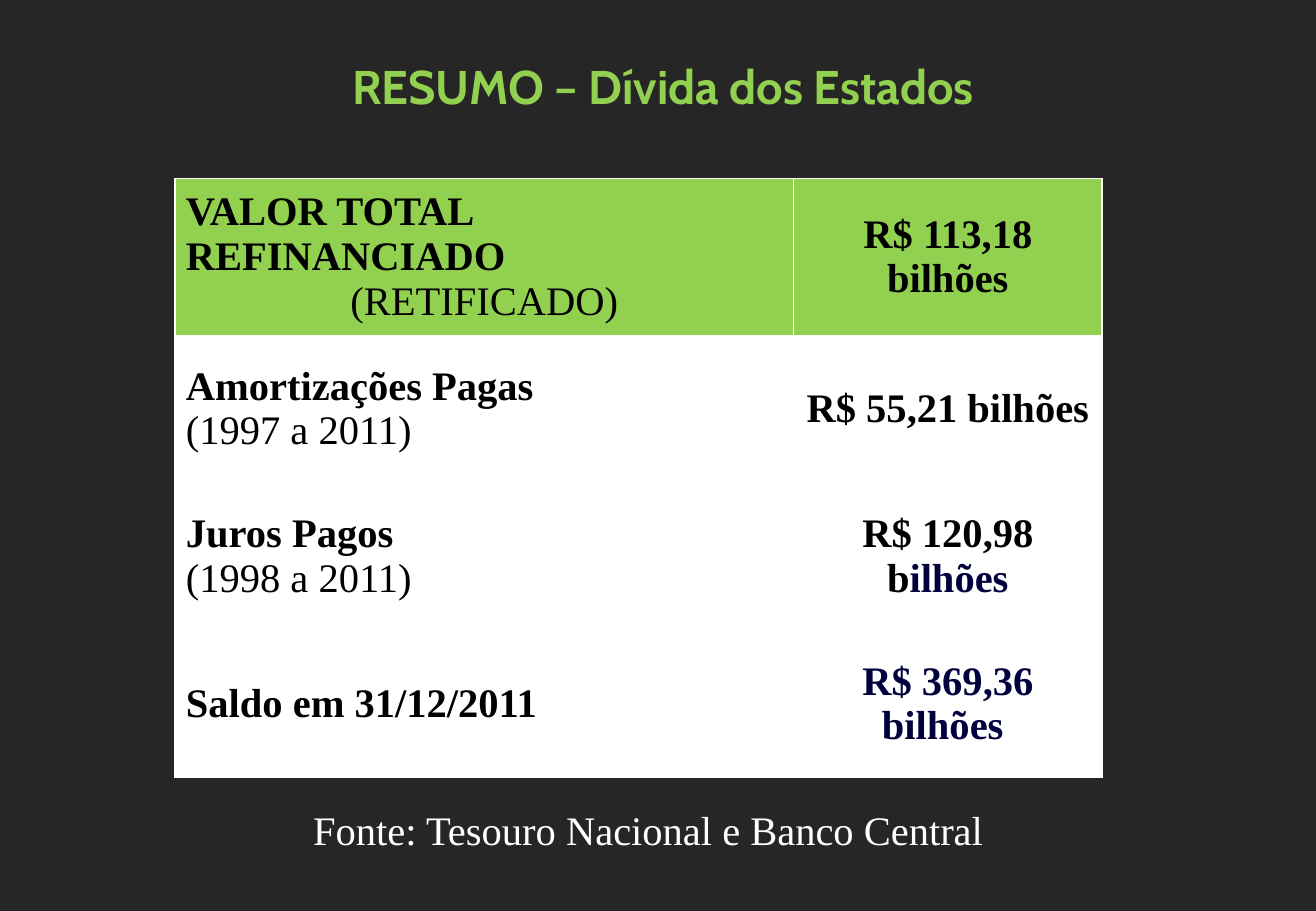
from lxml.etree import SubElement
from pptx import Presentation
from pptx.dml.color import RGBColor
from pptx.enum.text import MSO_ANCHOR, PP_ALIGN
from pptx.oxml.ns import qn
from pptx.util import Inches, Pt

GREEN, WHITE, BLACK, NAVY, CHARCOAL = "92D050", "FFFFFF", "000000", "00003D", "262626"

# Each cell is a list of paragraphs, each paragraph a list of (text, colour) runs.
DEBT_ROWS = [
    ([[("VALOR TOTAL REFINANCIADO", BLACK)], [("(RETIFICADO)", BLACK)]],
     [[("R$ 113,18 bilhões", BLACK)]]),
    ([[("Amortizações Pagas", BLACK)], [("(1997 a 2011)", BLACK)]],
     [[("R$ 55,21 bilhões", BLACK)]]),
    ([[("Juros Pagos", BLACK)], [("(1998 a 2011)", BLACK)]],
     [[("R$ 120,98 b", BLACK), ("ilhões", NAVY)]]),
    ([[("Saldo em 31/12/2011", BLACK)]],
     [[("R$ 369,36 bilhões ", NAVY)]]),
]


def color(hex_string):
    return RGBColor.from_string(hex_string)


class DebtSlide:
    title_font = "Cabin"
    text_font = "Times New Roman"
    text_size = 24

    def __init__(self, presentation):
        self.slide = presentation.slides.add_slide(presentation.slide_layouts[5])
        fill = self.slide.background.fill
        fill.solid()
        fill.fore_color.rgb = color(CHARCOAL)

    def format_run(self, run, hex_string, bold=False, size=text_size, font=text_font):
        run.font.name = font
        run.font.size = Pt(size)
        run.font.bold = bold
        run.font.color.rgb = color(hex_string)

    def title(self, text, left, top, width, height):
        shape = self.slide.shapes.title
        shape.left, shape.top = Inches(left), Inches(top)
        shape.width, shape.height = Inches(width), Inches(height)
        shape.text_frame.text = text
        shape.text_frame.vertical_anchor = MSO_ANCHOR.MIDDLE
        paragraph = shape.text_frame.paragraphs[0]
        paragraph.alignment = PP_ALIGN.CENTER
        self.format_run(paragraph.runs[0], GREEN, True, 28, self.title_font)

    def caption(self, text, left, top, width, height):
        shape = self.slide.shapes.add_textbox(
            Inches(left), Inches(top), Inches(width), Inches(height))
        shape.text_frame.word_wrap = True
        shape.text_frame.text = text
        paragraph = shape.text_frame.paragraphs[0]
        paragraph.alignment = PP_ALIGN.CENTER
        self.format_run(paragraph.runs[0], WHITE)

    def table(self, rows, left, top, column_widths, row_heights):
        table = self.slide.shapes.add_table(
            len(rows), len(column_widths), Inches(left), Inches(top),
            Inches(sum(column_widths)), Inches(sum(row_heights))).table
        table.horz_banding = False
        for column, width in zip(table.columns, column_widths):
            column.width = Inches(width)
        for row, height in zip(table.rows, row_heights):
            row.height = Inches(height)
        for row_index, row in enumerate(rows):
            for column_index, paragraphs in enumerate(row):
                cell = table.cell(row_index, column_index)
                self.fill_cell(cell, paragraphs, GREEN if row_index == 0 else WHITE)
                centred = cell.text_frame.paragraphs[0 if column_index else -1]
                if column_index or row_index == 0:
                    centred.alignment = PP_ALIGN.CENTER

    def fill_cell(self, cell, paragraphs, fill_color):
        """Write a bold first paragraph and regular later ones on a bordered fill."""
        self.border(cell)
        cell.fill.solid()
        cell.fill.fore_color.rgb = color(fill_color)
        cell.vertical_anchor = MSO_ANCHOR.MIDDLE
        cell.margin_left = cell.margin_right = Inches(0.09)
        cell.margin_top = cell.margin_bottom = Inches(0.05)
        for index, runs in enumerate(paragraphs):
            frame = cell.text_frame
            paragraph = frame.add_paragraph() if index else frame.paragraphs[0]
            paragraph.alignment = PP_ALIGN.LEFT
            for text, hex_string in runs:
                run = paragraph.add_run()
                run.text = text
                self.format_run(run, hex_string, bold=index == 0)

    def border(self, cell):
        properties = cell._tc.get_or_add_tcPr()
        for side in ("a:lnL", "a:lnR", "a:lnT", "a:lnB"):
            line = SubElement(properties, qn(side), w=str(Pt(1)))
            solid = SubElement(line, qn("a:solidFill"))
            SubElement(solid, qn("a:srgbClr"), val=WHITE)


def main():
    presentation = Presentation()
    presentation.slide_width, presentation.slide_height = Inches(10.83), Inches(7.5)
    slide = DebtSlide(presentation)
    slide.title("RESUMO – Dívida dos Estados", 0.61, 0.42, 9.69, 0.57)
    slide.table(DEBT_ROWS, 1.44, 1.47, [5.09, 2.54], [1.29, 1.21, 1.22, 1.21])
    slide.caption("Fonte: Tesouro Nacional e Banco Central", 1.95, 6.58, 6.77, 0.5)
    presentation.save("out.pptx")


if __name__ == "__main__":
    main()
